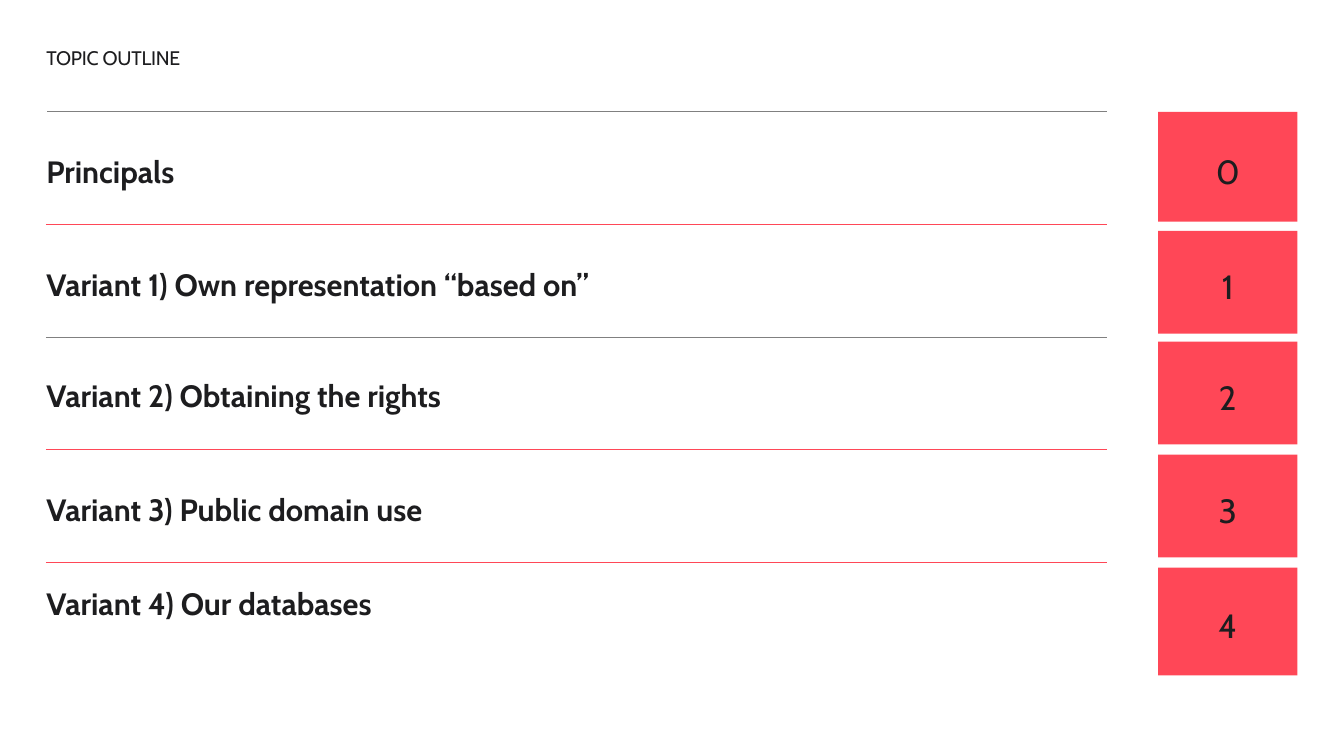
from dataclasses import dataclass

import lxml.etree
import pptx
import pptx.dml.color
import pptx.enum.shapes
import pptx.enum.text
import pptx.oxml.ns
import pptx.util

Pt = pptx.util.Pt
Align = pptx.enum.text.PP_ALIGN
qn = pptx.oxml.ns.qn


@dataclass(frozen=True)
class Theme:
    font: str = "Cabin"
    ink: str = "1D1D1F"
    red: str = "FF4757"
    gray: str = "808080"
    white: str = "FFFFFF"
    title_size: int = 14
    topic_size: int = 22
    number_size: int = 24


THEME = Theme()
LEFT = 33.1
TABLE_TOP = 79.9
ROW_HEIGHT = 80.5
COLUMN_WIDTHS = (758.2, 36.7, 98.6)
TOPIC_WIDTH, TOPIC_HEIGHT = 751, 78.5
NUMBER_LEFT, NUMBER_WIDTH = 827.3, 99.4

# Topic, its top, lift of the text, top and height of its number block
TOPICS = (
    ("Principals", 80.6, 0, 79.9, 78.5),
    ("Variant 1) Own representation “based on”", 161.3, 0, 164.9, 73.4),
    ("Variant 2) Obtaining the rights", 240.5, 0, 244.1, 73.4),
    ("Variant 3) Public domain use", 321.8, 0, 324.7, 73.4),
    ("Variant 4) Our databases", 403.2, 29, 405.4, 77),
)
# Rules above each row; the last row has none below
RULE_COLORS = (THEME.gray, THEME.red, THEME.gray, THEME.red, THEME.red)


def color(code):
    return pptx.dml.color.RGBColor.from_string(code)


def write(box, text, size, bold=False, align=Align.LEFT, spacing=1.2, lift=0):
    frame = box.text_frame
    frame.word_wrap = True
    frame.auto_size = pptx.enum.text.MSO_AUTO_SIZE.NONE
    frame.vertical_anchor = pptx.enum.text.MSO_ANCHOR.MIDDLE
    frame.margin_left = frame.margin_top = frame.margin_right = 0
    frame.margin_bottom = Pt(lift)
    para = frame.paragraphs[0]
    para.alignment = align
    para.line_spacing = spacing
    span = para.add_run()
    span.text = text
    span.font.name = THEME.font
    span.font.size = Pt(size)
    span.font.bold = bold
    span.font.color.rgb = color(THEME.ink)
    return span


def add_title(page, text):
    title = page.shapes.title
    title.left, title.top = Pt(LEFT), Pt(27.4)
    title.width, title.height = Pt(sum(COLUMN_WIDTHS)), Pt(30.2)
    span = write(title, text, THEME.title_size, spacing=0.9)
    span.font._element.set("spc", "-20")


def set_border(cell, side, code, width):
    line = lxml.etree.SubElement(cell._tc.get_or_add_tcPr(), qn("a:" + side))
    line.set("w", str(Pt(width)))
    fill = lxml.etree.SubElement(line, qn("a:solidFill"))
    lxml.etree.SubElement(fill, qn("a:srgbClr")).set("val", code)


def add_ruled_table(page):
    rows = len(TOPICS)
    table = page.shapes.add_table(
        rows, len(COLUMN_WIDTHS), Pt(LEFT), Pt(TABLE_TOP),
        Pt(sum(COLUMN_WIDTHS)), Pt(ROW_HEIGHT * rows)).table
    table.first_row = table.horz_banding = False
    for column, width in zip(table.columns, COLUMN_WIDTHS):
        column.width = Pt(width)
    for index in range(rows):
        topic, gap, number = table.rows[index].cells
        set_border(topic, "lnT", RULE_COLORS[index], 1)
        if index > 0:
            set_border(number, "lnT", THEME.white, 6)
        if index < rows - 1:
            set_border(topic, "lnB", RULE_COLORS[index + 1], 1)
            set_border(number, "lnB", THEME.white, 6)
        topic.fill.solid()
        topic.fill.fore_color.rgb = color(THEME.white)
        gap.fill.background()
        number.fill.background()


def add_topic(page, text, top, lift):
    box = page.shapes.add_textbox(
        Pt(LEFT), Pt(top), Pt(TOPIC_WIDTH), Pt(TOPIC_HEIGHT))
    write(box, text, THEME.topic_size, bold=True, lift=lift)


def add_number(page, number, top, height):
    block = page.shapes.add_shape(
        pptx.enum.shapes.MSO_SHAPE.RECTANGLE,
        Pt(NUMBER_LEFT), Pt(top), Pt(NUMBER_WIDTH), Pt(height))
    block.shadow.inherit = False
    block.fill.solid()
    block.fill.fore_color.rgb = color(THEME.red)
    block.line.fill.background()
    write(block, str(number), THEME.number_size, align=Align.CENTER)


def main():
    deck = pptx.Presentation()
    deck.slide_width, deck.slide_height = Pt(960), Pt(540)
    page = deck.slides.add_slide(deck.slide_layouts[5])

    # Heading and ruled rows
    add_title(page, "TOPIC OUTLINE")
    add_ruled_table(page)

    # Topics with their numbers
    for number, (text, top, lift, block_top, block_height) in enumerate(TOPICS):
        add_topic(page, text, top, lift)
        add_number(page, number, block_top, block_height)

    deck.save("out.pptx")


if __name__ == "__main__":
    main()
